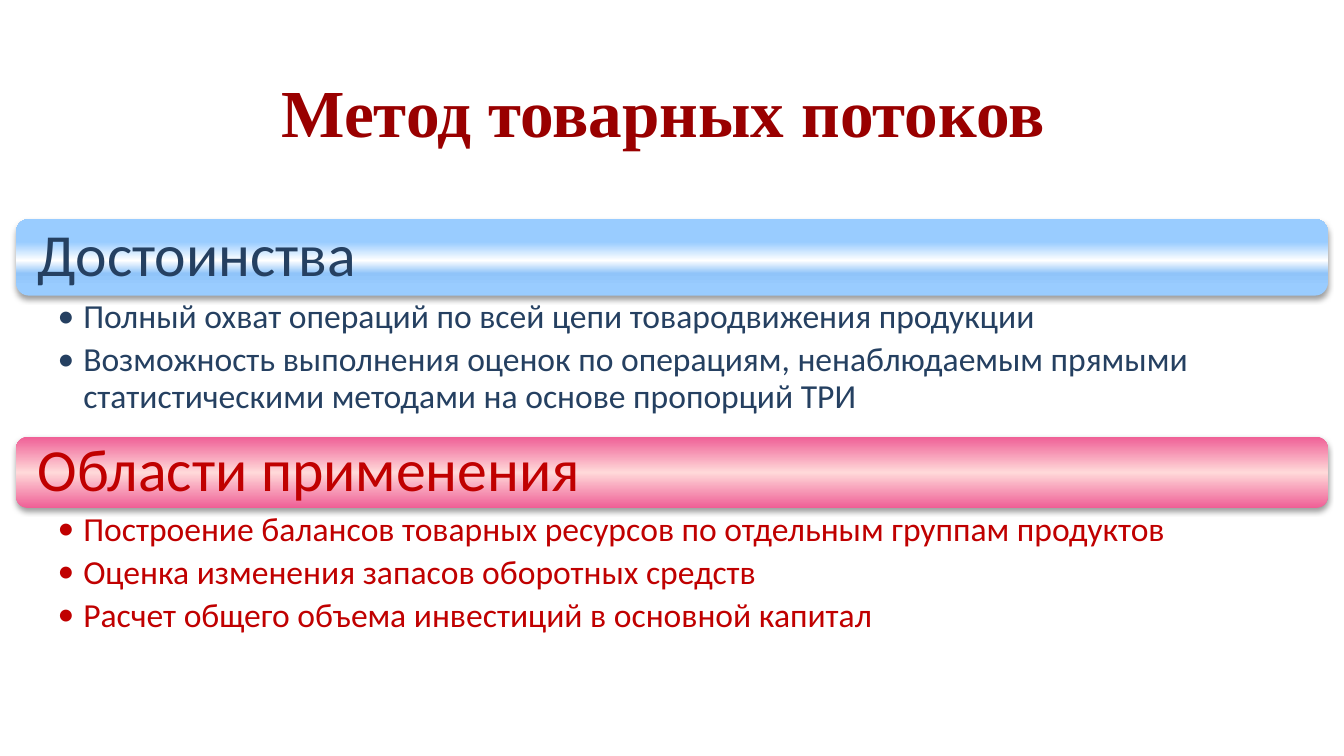
from lxml.etree import SubElement
from pptx import Presentation
from pptx.dml.color import RGBColor
from pptx.enum.shapes import MSO_SHAPE
from pptx.enum.text import MSO_ANCHOR, PP_ALIGN
from pptx.oxml.ns import qn
from pptx.util import Inches, Pt

WIDE = 10
HIGH = WIDE * 9 / 16
LEFT, SPAN = 0.12, 9.76
HUES = {"title": "990000", "navy": "254061", "red": "C00000", "sky": "99CCFF",
        "mist": "90C4F9", "white": "FFFFFF", "rose": "EF5F96", "blush": "FFD9D9",
        "shade": "000000"}
BLUE = [(0, "sky"), (13, "sky"), (29, "mist"), (46, "white"), (70, "sky"),
        (81, "sky"), (91, "sky"), (100, "sky")]
PINK = [(0, "rose"), (50, "blush"), (100, "rose")]
PARTS = [
    ("Достоинства", "navy", BLUE, 1.63, 0.57, 1.04, [
        "Полный охват операций по всей цепи товародвижения продукции",
        "Возможность выполнения оценок по операциям, ненаблюдаемым прямыми "
        "статистическими методами на основе пропорций ТРИ"]),
    ("Области применения", "red", PINK, 3.25, 0.53, 1.16, [
        "Построение балансов товарных ресурсов по отдельным группам продуктов",
        "Оценка изменения запасов оборотных средств",
        "Расчет общего объема инвестиций в основной капитал"]),
]


def add_box(slide, area, pads, anchor):
    """Add a wrapping text box and return its frame."""
    frame = slide.shapes.add_textbox(*map(Inches, area)).text_frame
    frame.word_wrap = True
    frame.vertical_anchor = anchor
    (frame.margin_left, frame.margin_top,
     frame.margin_right, frame.margin_bottom) = map(Inches, pads)
    return frame


def add_run(para, text, size, hue, face="Calibri", bold=False):
    """Add one styled run to a paragraph."""
    run = para.add_run()
    run.text = text
    font = run.font
    font.size, font.name, font.bold = Pt(size), face, bold
    font.color.rgb = RGBColor.from_string(HUES[hue])


def add_bar(slide, area, stops):
    """Add a rounded bar with an upward gradient and a soft shadow."""
    bar = slide.shapes.add_shape(MSO_SHAPE.ROUNDED_RECTANGLE, *map(Inches, area))
    bar.line.fill.background()
    bar.fill.gradient()
    bar.fill.gradient_angle = 90
    bar.shadow.inherit = False
    props = bar._element.spPr
    ramp = props.find(qn("a:gradFill")).find(qn("a:gsLst"))
    for old in list(ramp):
        ramp.remove(old)
    for share, hue in stops:
        stop = SubElement(ramp, qn("a:gs"), pos=str(share * 1000))
        SubElement(stop, qn("a:srgbClr"), val=HUES[hue])
    glow = SubElement(props.find(qn("a:effectLst")), qn("a:outerShdw"),
                      blurRad=str(Pt(3.1)), dist=str(Pt(1.6)), dir="5400000",
                      rotWithShape="0")
    tint = SubElement(glow, qn("a:srgbClr"), val=HUES["shade"])
    SubElement(tint, qn("a:alpha"), val="38000")


def add_list(slide, area, items, hue):
    """Add a bulleted list."""
    frame = add_box(slide, area, (0.31, 0.03, 0.14, 0.03), MSO_ANCHOR.TOP)
    for index, item in enumerate(items):
        para = frame.add_paragraph() if index else frame.paragraphs[0]
        props = para._p.get_or_add_pPr()
        props.set("marL", str(Inches(0.19)))
        props.set("indent", str(-Inches(0.19)))
        SubElement(props, qn("a:buFont"), typeface="Calibri")
        SubElement(props, qn("a:buChar"), char="•")
        para.level = 1
        para.line_spacing = 0.9
        para.space_after = Pt(3.6)
        add_run(para, item, 18, hue)


def add_part(slide, head, hue, stops, top, tall, depth, items):
    """Add a heading bar with its list below."""
    add_bar(slide, (LEFT, top, SPAN, tall), stops)
    edge = 0.03
    inner = (LEFT + edge, top + edge, SPAN - 2 * edge, tall - 2 * edge)
    frame = add_box(slide, inner, [0.13] * 4, MSO_ANCHOR.MIDDLE)
    para = frame.paragraphs[0]
    para.line_spacing = 0.9
    para.space_after = Pt(11.2)
    add_run(para, head, 32, hue)
    add_list(slide, (LEFT, top + tall, SPAN, depth), items, hue)


def main():
    """Build and save the slide."""
    deck = Presentation()
    deck.slide_width, deck.slide_height = Inches(WIDE), Inches(HIGH)
    slide = deck.slides.add_slide(deck.slide_layouts[6])
    frame = add_box(slide, (1, 0.53, 7.87, 0.59), (0.1, 0.05, 0.1, 0.05),
                    MSO_ANCHOR.MIDDLE)
    para = frame.paragraphs[0]
    para.alignment = PP_ALIGN.CENTER
    add_run(para, "Метод товарных потоков", 36, "title", "Times New Roman", True)
    for part in PARTS:
        add_part(slide, *part)
    deck.save("out.pptx")


if __name__ == "__main__":
    main()
